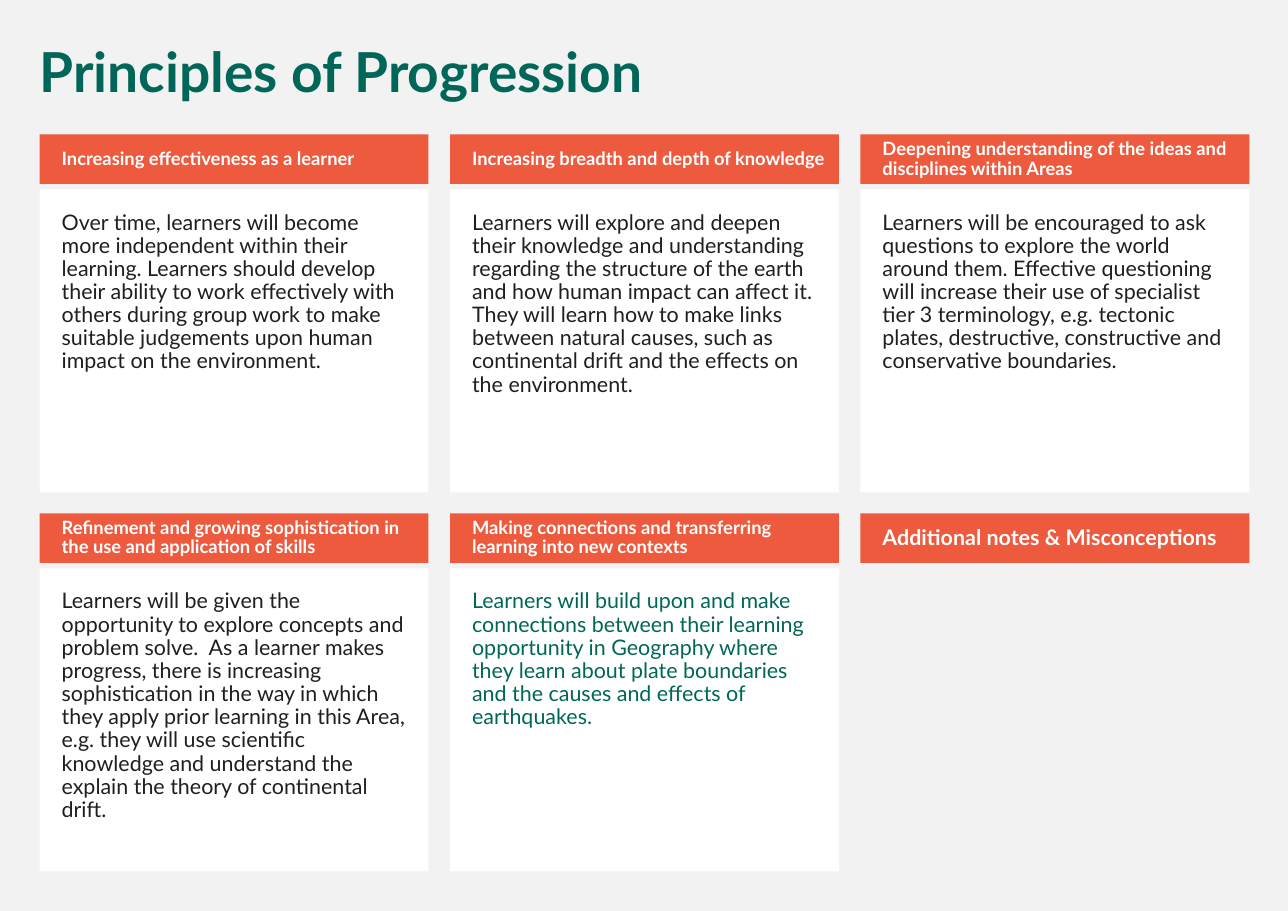
from pptx import Presentation
from pptx.dml.color import RGBColor
from pptx.enum.shapes import MSO_SHAPE
from pptx.enum.text import MSO_ANCHOR, PP_ALIGN
from pptx.util import Inches, Pt

GREEN = RGBColor(0x00, 0x67, 0x58)
ORANGE = RGBColor(0xED, 0x5A, 0x3E)
INK = RGBColor(0x1F, 0x1F, 0x1F)
WHITE = RGBColor(0xFF, 0xFF, 0xFF)
GREY = RGBColor(0xF2, 0xF2, 0xF2)

# Content: heading, heading size, body text, body colour
TITLE = "Principles of Progression"
CARDS = [
    ("Increasing effectiveness as a learner", 12,
     "Over time, learners will become more independent within their learning. "
     "Learners should develop their ability to work effectively with others during "
     "group work to make suitable judgements upon human impact on the environment.",
     INK),
    ("Increasing breadth and depth of knowledge", 12,
     "Learners will explore and deepen their knowledge and understanding regarding "
     "the structure of the earth and how human impact can affect it. They will "
     "learn how to make links between natural causes, such as continental drift "
     "and the effects on the environment.", INK),
    ("Deepening understanding of the ideas and disciplines within Areas", 12,
     "Learners will be encouraged to ask questions to explore the world around "
     "them. Effective questioning will increase their use of specialist tier 3 "
     "terminology, e.g. tectonic plates, destructive, constructive and "
     "conservative boundaries.", INK),
    ("Refinement and growing sophistication in the use and application of skills", 12,
     "Learners will be given the opportunity to explore concepts and problem "
     "solve.  As a learner makes progress, there is increasing sophistication in "
     "the way in which they apply prior learning in this Area, e.g. they will use "
     "scientific knowledge and understand the explain the theory of continental "
     "drift.", INK),
    ("Making connections and transferring learning into new contexts", 12,
     "Learners will build upon and make connections between their learning "
     "opportunity in Geography where they learn about plate boundaries and the "
     "causes and effects of earthquakes.", GREEN),
    ("Additional notes & Misconceptions", 14, None, None),
]

# Grid
COLUMNS = 3
LEFT, RIGHT, TOP = 0.36, 11.34, 1.22
CARD_WIDTH, HEADING_HEIGHT, BODY_HEIGHT = 3.53, 0.45, 2.75
COLUMN_STEP = (RIGHT - LEFT - CARD_WIDTH) / (COLUMNS - 1)
ROW_STEP = 3.44
BODY_OFFSET = 0.5


def write_text(shape, text, size, color, bold=False, anchor=MSO_ANCHOR.TOP,
               margins=(0.1, 0.05, 0.1, 0.05)):
    frame = shape.text_frame
    frame.word_wrap = True
    frame.vertical_anchor = anchor
    (frame.margin_left, frame.margin_top,
     frame.margin_right, frame.margin_bottom) = map(Inches, margins)
    paragraph = frame.paragraphs[0]
    paragraph.alignment = PP_ALIGN.LEFT
    paragraph.line_spacing = 0.9
    paragraph.space_before = Pt(11)
    run = paragraph.add_run()
    run.text = text
    run.font.name = "Lato"
    run.font.size = Pt(size)
    run.font.bold = bold
    run.font.color.rgb = color


def add_panel(slide, left, top, height, fill):
    shape = slide.shapes.add_shape(MSO_SHAPE.RECTANGLE, Inches(left), Inches(top),
                                   Inches(CARD_WIDTH), Inches(height))
    shape.shadow.inherit = False
    shape.fill.solid()
    shape.fill.fore_color.rgb = fill
    shape.line.fill.background()
    return shape


def main():
    presentation = Presentation()
    presentation.slide_width = Inches(11.69)
    presentation.slide_height = Inches(8.27)
    slide = presentation.slides.add_slide(presentation.slide_layouts[5])
    slide.background.fill.solid()
    slide.background.fill.fore_color.rgb = GREY

    # Title
    title = slide.shapes.title
    title.left, title.top = Inches(0.26), Inches(0.36)
    title.width, title.height = Inches(11.08), Inches(0.65)
    write_text(title, TITLE, 36, GREEN, bold=True)

    # Cards: a heading bar above a white body
    for index, (heading, heading_size, body, body_color) in enumerate(CARDS):
        row, column = divmod(index, COLUMNS)
        left = LEFT + column * COLUMN_STEP
        top = TOP + row * ROW_STEP
        bar = add_panel(slide, left, top, HEADING_HEIGHT, ORANGE)
        write_text(bar, heading, heading_size, WHITE, bold=True,
                   anchor=MSO_ANCHOR.MIDDLE, margins=(0.2, 0.05, 0.1, 0.05))
        if body:
            panel = add_panel(slide, left, top + BODY_OFFSET, BODY_HEIGHT, WHITE)
            write_text(panel, body, 14, body_color, margins=(0.2, 0.2, 0.2, 0.2))

    presentation.save("out.pptx")


if __name__ == "__main__":
    main()
